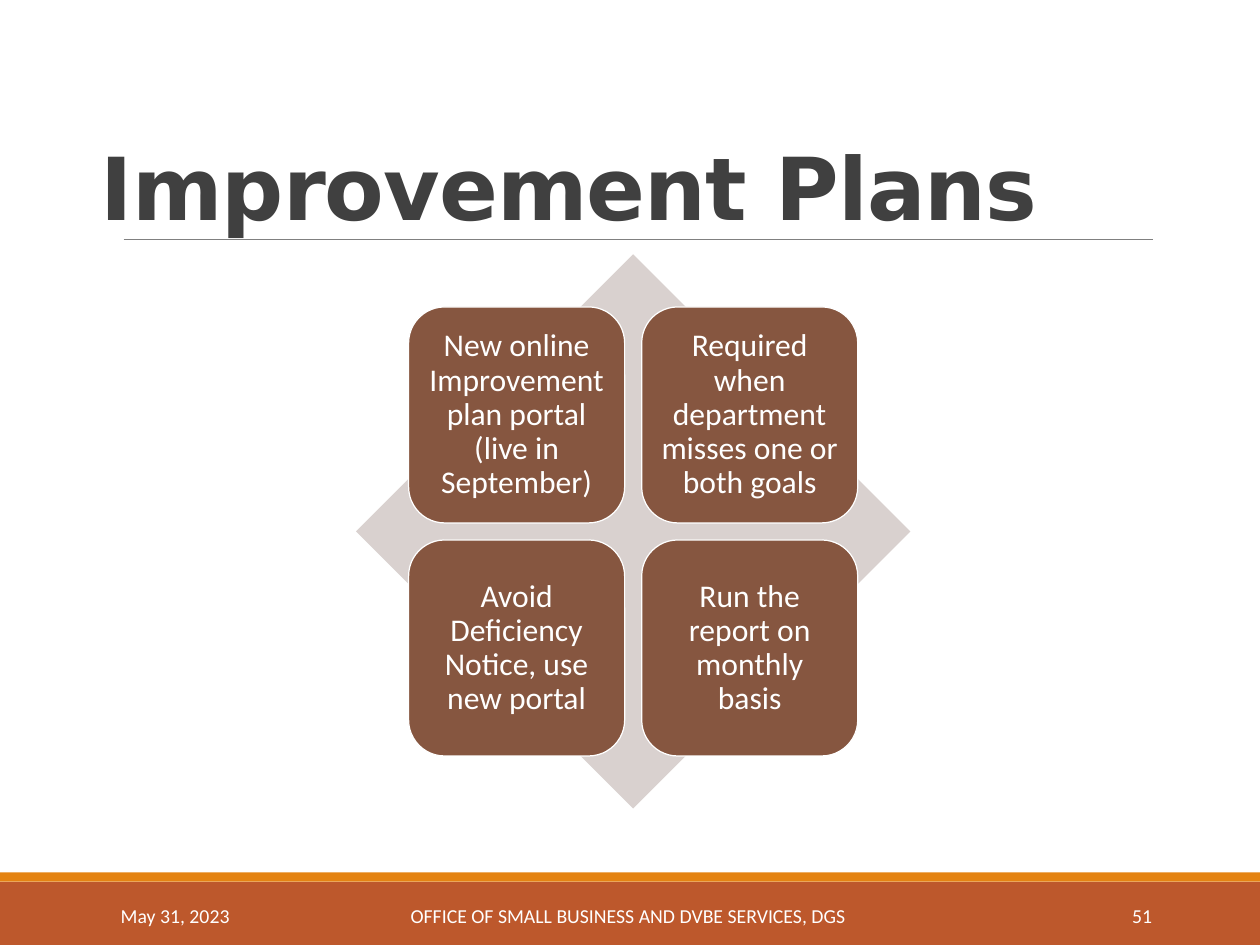
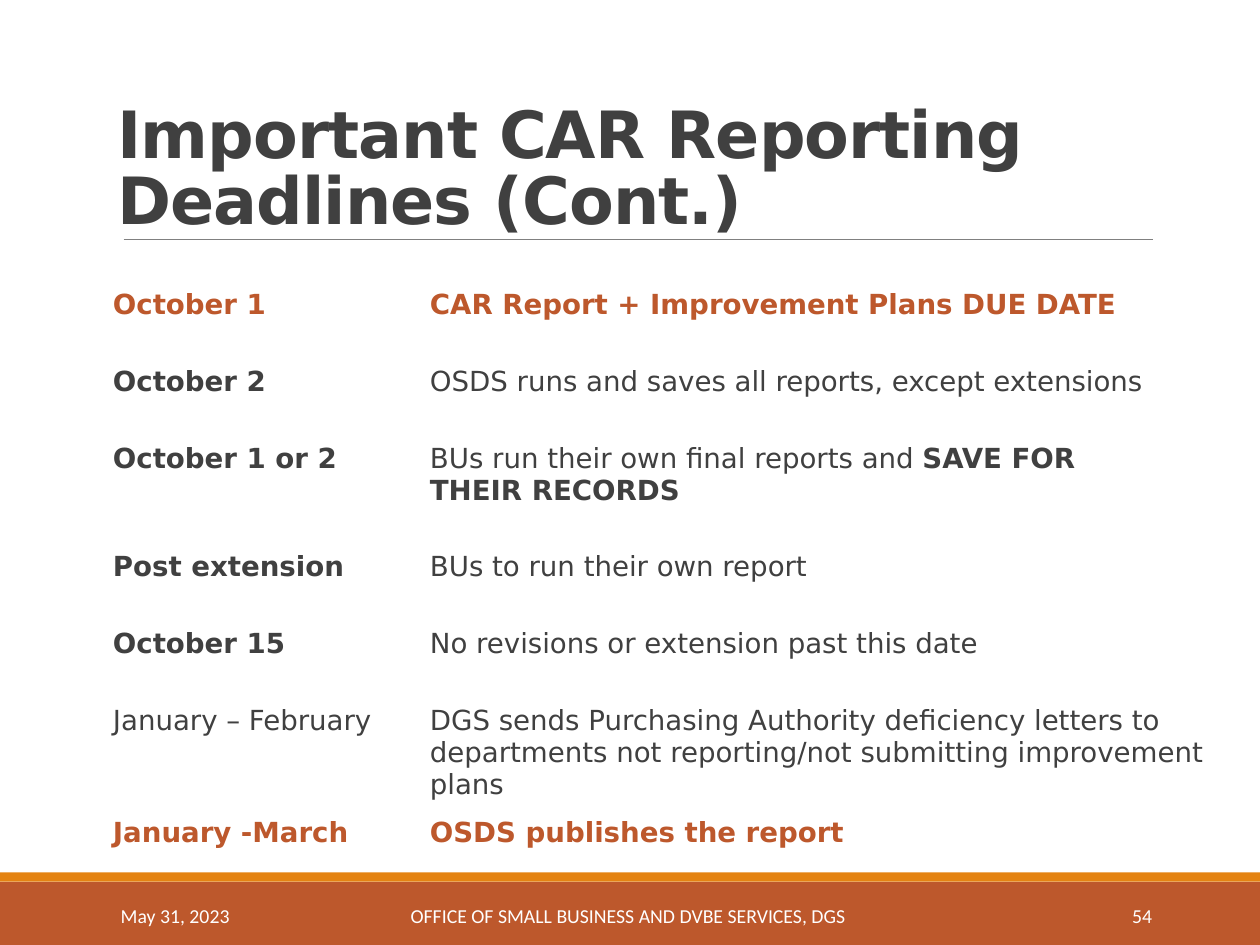
from lxml.etree import SubElement
from pptx import Presentation
from pptx.dml.color import RGBColor
from pptx.enum.shapes import MSO_CONNECTOR, MSO_SHAPE
from pptx.enum.text import MSO_ANCHOR, PP_ALIGN
from pptx.oxml.ns import qn
from pptx.util import Inches, Pt

RUST = RGBColor(0xBD, 0x58, 0x2C)
ORANGE = RGBColor(0xE4, 0x83, 0x12)
BROWN = RGBColor(0x86, 0x56, 0x40)
PALE = RGBColor(0xD9, 0xD1, 0xCF)
GRAY = RGBColor(0x80, 0x80, 0x80)
DARK = RGBColor(0x40, 0x40, 0x40)
WHITE = RGBColor(0xFF, 0xFF, 0xFF)
HEAD = "DejaVu Sans"
BODY = "Calibri"
NO_GRID = "{2D5ABB26-0587-4C30-8999-92F81FD0307C}"


def write(frame, text, font=BODY, size=20, color=WHITE, bold=False,
          align=PP_ALIGN.LEFT, space=1.0, track=0, anchor=MSO_ANCHOR.MIDDLE,
          pads=(0.1, 0.05, 0.1, 0.05)):
    frame.word_wrap = True
    frame.vertical_anchor = anchor
    (frame.margin_left, frame.margin_top,
     frame.margin_right, frame.margin_bottom) = [Inches(pad) for pad in pads]
    para = frame.paragraphs[0]
    para.alignment = align
    para.line_spacing = space
    parts = [(text, bold)] if isinstance(text, str) else text
    for words, heavy in parts:
        if words == "\n":
            para.add_line_break()
            continue
        run = para.add_run()
        run.text = words
        run.font.name = font
        run.font.size = Pt(size)
        run.font.bold = heavy
        run.font.color.rgb = color
        if track:
            run._r.get_or_add_rPr().set("spc", str(track))


def block(slide, kind, left, top, width, height, fill, line=None):
    shape = slide.shapes.add_shape(
        kind, Inches(left), Inches(top), Inches(width), Inches(height))
    shape.shadow.inherit = False
    shape.fill.solid()
    shape.fill.fore_color.rgb = fill
    if line is None:
        shape.line.fill.background()
    else:
        shape.line.color.rgb = line
        shape.line.width = Pt(1.25)
    return shape


deck = Presentation()
deck.slide_width = Inches(17.73)
deck.slide_height = Inches(13.3)

pages = [
    ("Improvement Plans", 88, 1.37, "51"),
    ("Important CAR Reporting Deadlines (Cont.)", 66, 1.6, "54"),
]
slides = []
for title, size, left, number in pages:
    slide = deck.slides.add_slide(deck.slide_layouts[6])
    slides.append(slide)
    block(slide, MSO_SHAPE.RECTANGLE, 0, 12.41, 17.73, 0.89, RUST)
    block(slide, MSO_SHAPE.RECTANGLE, 0, 12.28, 17.73, 0.13, ORANGE)
    rule = slide.shapes.add_connector(
        MSO_CONNECTOR.STRAIGHT, Inches(1.74), Inches(3.37), Inches(16.23), Inches(3.37))
    rule.line.color.rgb = GRAY
    rule.line.width = Pt(0.5)
    SubElement(rule._element.spPr, qn("a:effectLst"))
    box = slide.shapes.add_textbox(
        Inches(left), Inches(0.56), Inches(16.23 - left), Inches(2.81))
    write(box.text_frame, title, font=HEAD, size=size, color=DARK, bold=True,
          space=0.85, track=-90, anchor=MSO_ANCHOR.BOTTOM, pads=(0.05, 0.05, 0.05, 0.02))
    for words, start, width, align in [
        ("May 31, 2023", 1.6, 3.6, PP_ALIGN.LEFT),
        ("OFFICE OF SMALL BUSINESS AND DVBE SERVICES, DGS ", 5.36, 7.02, PP_ALIGN.CENTER),
        (number, 14.4, 1.91, PP_ALIGN.RIGHT),
    ]:
        box = slide.shapes.add_textbox(
            Inches(start), Inches(12.53), Inches(width), Inches(0.71))
        write(box.text_frame, words, align=align)

plans, dates = slides

block(plans, MSO_SHAPE.DIAMOND, 5.01, 3.58, 7.8, 7.8, PALE)
cards = [
    "New online Improvement plan portal (live in September)",
    "Required when department misses one or both goals",
    "Avoid Deficiency Notice, use new portal",
    "Run the report on monthly basis",
]
side, step = 3.04, 3.28
for spot, words in enumerate(cards):
    row, col = divmod(spot, 2)
    card = block(plans, MSO_SHAPE.ROUNDED_RECTANGLE, 5.75 + col * step,
                 4.32 + row * step, side, side, BROWN, WHITE)
    write(card.text_frame, words, size=32, align=PP_ALIGN.CENTER, space=0.9,
          pads=(0.13,) * 4)

rows = [
    (1.09, RUST, True, "October 1", [("CAR Report + Improvement Plans DUE DATE", True)]),
    (1.08, DARK, True, "October 2",
     [("OSDS runs and saves all reports, except extensions", False)]),
    (1.53, DARK, True, "October 1 or 2",
     [("BUs run their own final reports and ", False), ("SAVE FOR", True),
      ("\n", True), ("THEIR RECORDS", True)]),
    (1.08, DARK, True, "Post extension", [("BUs to run their own report", False)]),
    (1.08, DARK, True, "October 15", [("No revisions or extension past this date", False)]),
    (1.54, DARK, False, "January – February",
     [("DGS sends Purchasing Authority deficiency letters to departments "
       "not reporting/not submitting improvement plans", False)]),
    (1.01, RUST, True, "January -March", [("OSDS publishes the report", True)]),
]
frame = dates.shapes.add_table(
    len(rows) + 1, 2, Inches(1.41), Inches(3.29), Inches(15.88), Inches(9.09))
table = frame.table
table.first_row = False
table.horz_banding = False
table._tbl.tblPr.find(qn("a:tableStyleId")).text = NO_GRID
table.columns[0].width = Inches(4.46)
table.columns[1].width = Inches(11.42)
table.rows[0].height = Inches(0.68)
for cell in table.iter_cells():
    cell.fill.background()
    cell.margin_left = cell.margin_right = Inches(0.18)
    cell.margin_top = cell.margin_bottom = Inches(0.09)
for index, (height, color, bold, day, task) in enumerate(rows, 1):
    table.rows[index].height = Inches(height)
    for col, words in enumerate([day, task]):
        cell = table.cell(index, col)
        write(cell.text_frame, words, font=HEAD, size=28, color=color, bold=bold,
              anchor=MSO_ANCHOR.TOP, pads=(0.18, 0.09, 0.18, 0.09))
        cell.vertical_anchor = MSO_ANCHOR.TOP
        cell.margin_left = cell.margin_right = Inches(0.18)
        cell.margin_top = cell.margin_bottom = Inches(0.09)

        body = cell.text_frame._txBody.bodyPr
        for name in list(body.attrib):
            del body.attrib[name]

deck.save("out.pptx")
